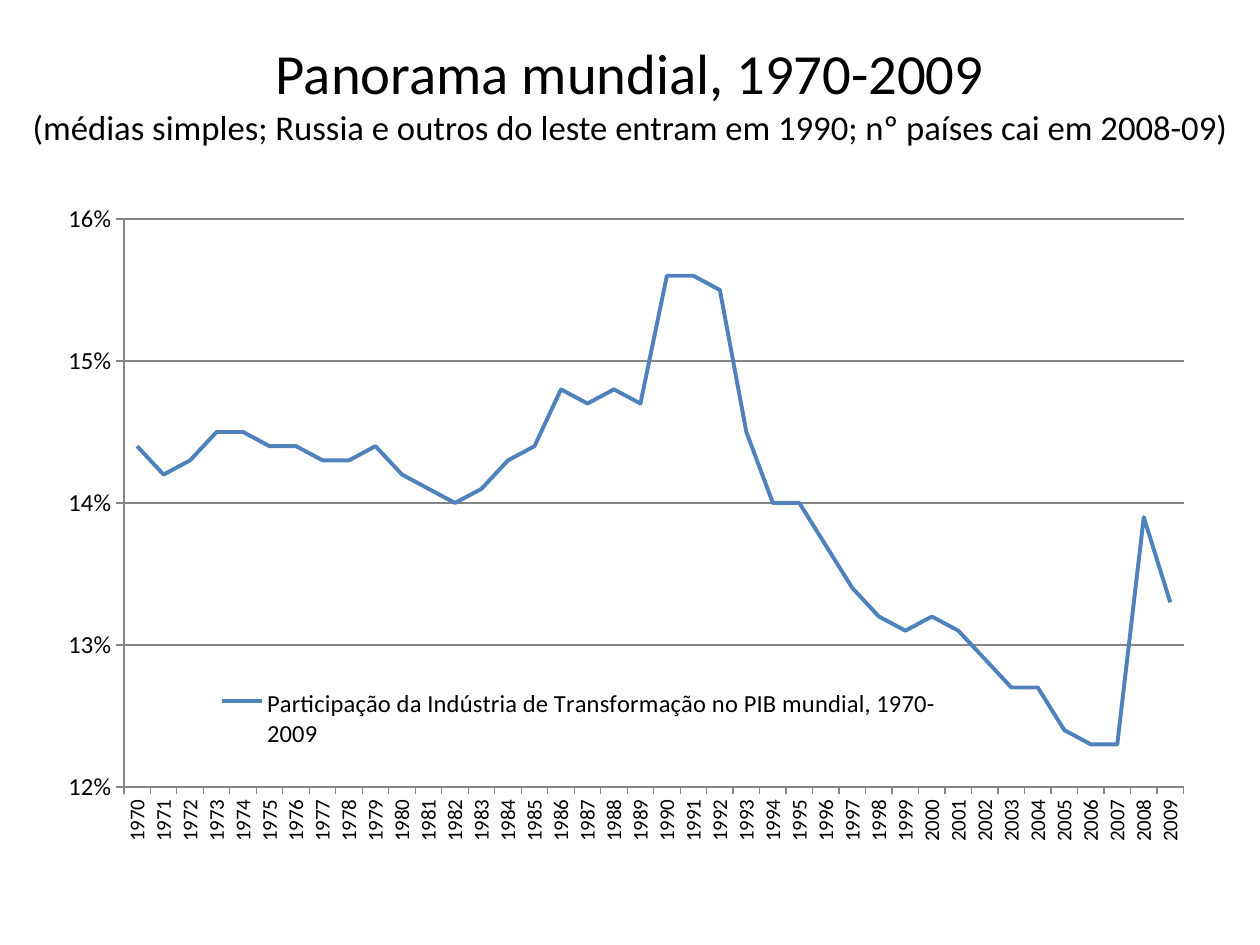
from dataclasses import dataclass

from lxml import etree
from pptx import Presentation
from pptx import util as u
from pptx.chart.data import CategoryChartData
from pptx.dml.color import RGBColor
from pptx.enum import chart as ch, text
from pptx.oxml.ns import qn

PX = u.Inches(1) // 126


@dataclass(frozen=True)
class Theme:
    font: str = "Calibri"
    ink: RGBColor = RGBColor(0, 0, 0)
    axis: RGBColor = RGBColor(0x86, 0x86, 0x86)
    line: RGBColor = RGBColor(0x4F, 0x81, 0xBD)
    title: float = 32.4
    subtitle: float = 19.8
    label: int = 14
    year: int = 12


T = Theme()

TITLE = "Panorama mundial, 1970-2009"
SUBTITLE = "(médias simples; Russia e outros do leste entram em 1990; nº países cai em 2008-09)"
SERIES = "Participação da Indústria de Transformação no PIB mundial, 1970-2009"
YEARS = range(1970, 2010)
SHARES = [
    0.144, 0.142, 0.143, 0.145, 0.145, 0.144, 0.144, 0.143, 0.143, 0.144,
    0.142, 0.141, 0.14, 0.141, 0.143, 0.144, 0.148, 0.147, 0.148, 0.147,
    0.156, 0.156, 0.155, 0.145, 0.14, 0.14, 0.137, 0.134, 0.132, 0.131,
    0.132, 0.131, 0.129, 0.127, 0.127, 0.124, 0.123, 0.123, 0.139, 0.133,
]


def box(*lengths):
    return [n * PX for n in lengths]


def style_font(font, size):
    font.name, font.size = T.font, u.Pt(size)
    font.color.rgb = T.ink


def style_line(line, color, width):
    line.color.rgb = color
    line.width = u.Pt(width)


def add_title(s):
    tf = s.shapes.add_textbox(*box(0, 38, 1260, 110)).text_frame
    tf.word_wrap = True
    tf.vertical_anchor = text.MSO_ANCHOR.MIDDLE
    p = tf.paragraphs[0]
    p.text = f"{TITLE}\v{SUBTITLE}"
    p.alignment = text.PP_ALIGN.CENTER
    for r, size in zip(p.runs, (T.title, T.subtitle)):
        style_font(r.font, size)


def manual_layout(x, y, w, h, inner=False):
    """Return a c:layout element placed in fractions of the chart."""
    layout = etree.Element(qn("c:layout"))
    manual = etree.SubElement(layout, qn("c:manualLayout"))
    settings = [("layoutTarget", "inner")] if inner else []
    settings += [("xMode", "edge"), ("yMode", "edge"),
                 ("x", x), ("y", y), ("w", w), ("h", h)]
    for tag, val in settings:
        etree.SubElement(manual, qn(f"c:{tag}")).set("val", str(val))
    return layout


def style_axes(chart):
    cat, val = chart.category_axis, chart.value_axis
    for axis, size in ((cat, T.year), (val, T.label)):
        axis.major_tick_mark = ch.XL_TICK_MARK.OUTSIDE
        axis.minor_tick_mark = ch.XL_TICK_MARK.NONE
        style_font(axis.tick_labels.font, size)
        style_line(axis.format.line, T.axis, 0.75)
    body = cat._element.find(qn("c:txPr")).find(qn("a:bodyPr"))
    body.set("rot", "-5400000")
    body.set("vert", "horz")
    val.minimum_scale, val.maximum_scale, val.major_unit = 0.12, 0.16, 0.01
    val.tick_labels.number_format = "0%"
    val.tick_labels.number_format_is_linked = False
    val.has_major_gridlines = True
    style_line(val.major_gridlines.format.line, T.axis, 0.75)


def place_legend(chart):
    chart.has_legend = True
    legend = chart.legend
    legend.position = ch.XL_LEGEND_POSITION.RIGHT
    legend.include_in_layout = False
    style_font(legend.font, T.label)
    el = legend._element
    for old in el.findall(qn("c:layout")):
        el.remove(old)
    el.find(qn("c:overlay")).addprevious(manual_layout(0.14, 0.73, 0.64, 0.1))


def place_plot(chart):
    area = chart._chartSpace.chart.plotArea
    for old in area.findall(qn("c:layout")):
        area.remove(old)
    area.insert(0, manual_layout(0.065, 0.033, 0.92, 0.849, inner=True))


def add_share_chart(s):
    data = CategoryChartData(number_format="0.0%")
    data.categories = [str(year) for year in YEARS]
    data.add_series(SERIES, SHARES)
    chart = s.shapes.add_chart(
        ch.XL_CHART_TYPE.LINE, *box(49, 197, 1152, 669), data).chart
    chart.has_title = False
    style_font(chart.font, 10)
    plot = chart.plots[0]
    plot.vary_by_categories = False
    series = plot.series[0]
    series.smooth = False
    series.marker.style = ch.XL_MARKER_STYLE.NONE
    style_line(series.format.line, T.line, 2.25)
    style_axes(chart)
    place_legend(chart)
    place_plot(chart)


def main():
    prs = Presentation()
    prs.slide_width, prs.slide_height = box(1260, 945)
    s = prs.slides.add_slide(prs.slide_layouts[6])
    add_title(s)
    add_share_chart(s)
    prs.save("out.pptx")


if __name__ == "__main__":
    main()
